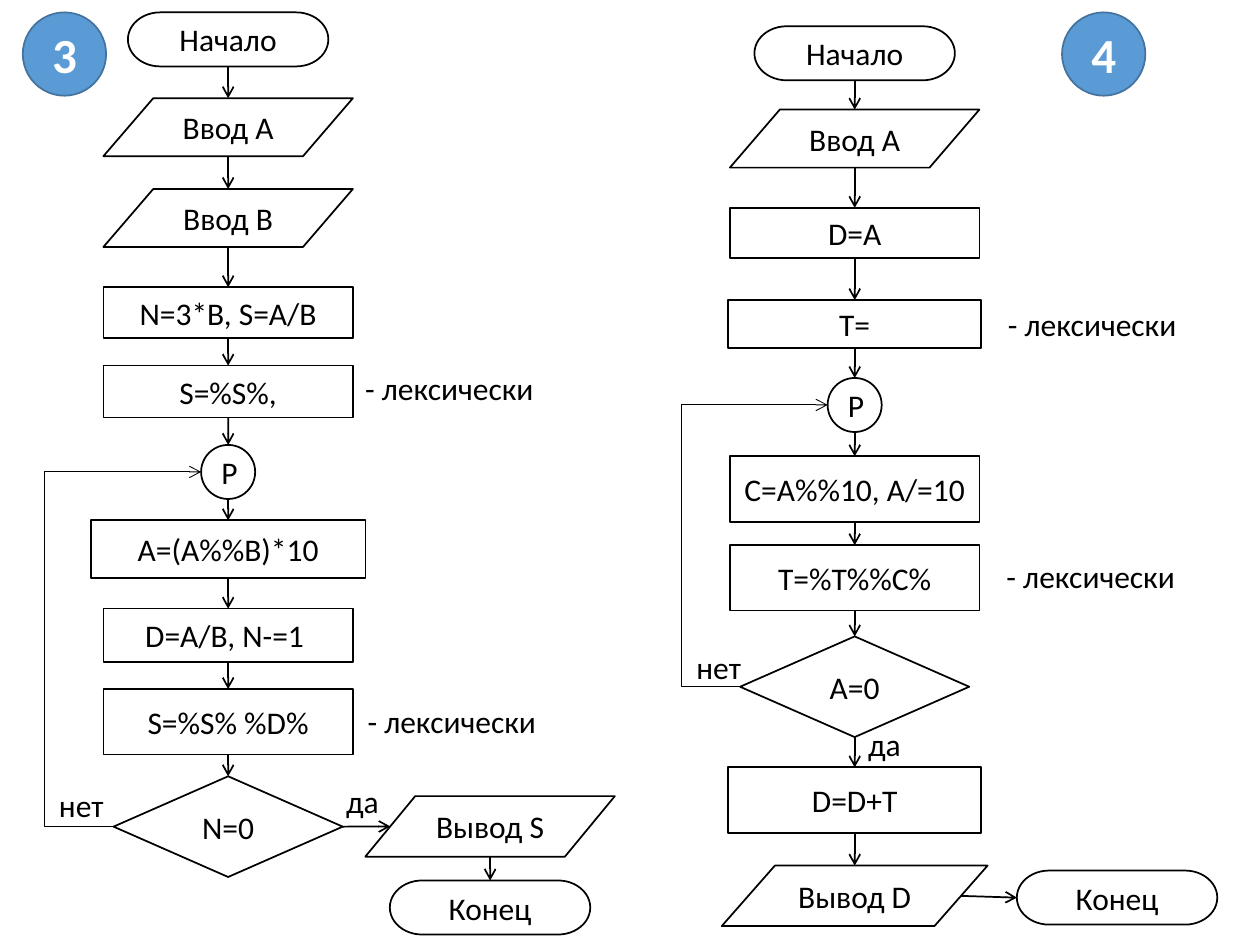
from lxml import etree
from pptx import Presentation
from pptx.dml.color import RGBColor
from pptx.enum.shapes import MSO_CONNECTOR, MSO_SHAPE
from pptx.enum.text import MSO_ANCHOR, MSO_AUTO_SIZE, PP_ALIGN
from pptx.oxml.ns import qn
from pptx.util import Cm, Pt

BLACK = RGBColor(0x00, 0x00, 0x00)
WHITE = RGBColor(0xFF, 0xFF, 0xFF)
BLUE = RGBColor(0x5B, 0x9B, 0xD5)
DARK_BLUE = RGBColor(0x43, 0x73, 0x9E)
FONT = "Calibri"

TERMINAL = MSO_SHAPE.FLOWCHART_TERMINATOR
DATA = MSO_SHAPE.FLOWCHART_DATA
PROCESS = MSO_SHAPE.RECTANGLE
DECISION = MSO_SHAPE.FLOWCHART_DECISION
JOINT = MSO_SHAPE.OVAL
STRAIGHT = MSO_CONNECTOR.STRAIGHT
ELBOW = MSO_CONNECTOR.ELBOW
MIDDLE = MSO_ANCHOR.MIDDLE
CENTER = PP_ALIGN.CENTER
FIT_SHAPE = MSO_AUTO_SIZE.SHAPE_TO_FIT_TEXT
TOP, LEFT, BOTTOM, RIGHT = range(4)
FOUR_SITED = (TERMINAL, PROCESS, DECISION)
LABEL_WIDTHS = {"да": 1.17, "нет": 1.42, "- лексически": 3.96}

# All measures in cm. Steps: kind, text, top, width, height
FLOWCHARTS = [
    {
        "number": "3", "badge_left": 0.46, "axis": 4.6, "loop_x": 0.89,
        "steps": [
            (TERMINAL, "Начало", 0.25, 4.04, 1.09),
            (DATA, "Ввод A", 1.98, 5.03, 1.17),
            (DATA, "Ввод B", 3.81, 5.03, 1.17),
            (PROCESS, "N=3*B, S=A/B", 5.79, 5.03, 1.02),
            (PROCESS, "S=%S%,", 7.37, 5.03, 1.05),
            (JOINT, "P", 8.97, 1.09, 1.09),
            (PROCESS, "A=(A%%B)*10", 10.49, 5.54, 1.17),
            (PROCESS, "D=A/B, N-=1 ", 12.27, 5.03, 1.07),
            (PROCESS, "S=%S% %D%", 13.89, 5.03, 1.32),
            (DECISION, "N=0", 15.65, 4.62, 2.03),
        ],
        # Side steps: kind, text, centre, top, width, height
        "side": [
            (DATA, "Вывод S", 9.88, 16.05, 5.03, 1.22),
            (TERMINAL, "Конец", 9.88, 17.75, 4.04, 1.09),
        ],
        "labels": [
            ("да", 6.73, 15.65), ("нет", 0.94, 15.72),
            ("- лексически", 7.16, 14.02), ("- лексически", 7.11, 7.32),
        ],
    },
    {
        "number": "4", "badge_left": 21.41, "axis": 17.23, "loop_x": 13.74,
        "steps": [
            (TERMINAL, "Начало", 0.53, 4.04, 1.09),
            (DATA, "Ввод A", 2.21, 5.03, 1.17),
            (PROCESS, "D=A", 4.19, 5.03, 1.02),
            (PROCESS, "T=", 6.05, 5.11, 0.97),
            (JOINT, "P", 7.62, 1.09, 1.09),
            (PROCESS, "C=A%%10, A/=10 ", 9.2, 5.03, 1.32),
            (PROCESS, "T=%T%%C%", 10.99, 5.03, 1.32),
            (DECISION, "A=0", 12.83, 4.62, 2.03),
            (PROCESS, "D=D+T", 15.47, 5.11, 1.32),
            (DATA, "Вывод D", 17.45, 5.36, 1.22),
        ],
        "side": [(TERMINAL, "Конец", 22.52, 17.55, 4.04, 1.09)],
        "labels": [
            ("да", 17.25, 14.5), ("нет", 13.79, 12.93),
            ("- лексически", 20.04, 11.1), ("- лексически", 20.07, 6.02),
        ],
    },
]

prs = Presentation()
prs.slide_width, prs.slide_height = Cm(25.4), Cm(19.05)
slide = prs.slides.add_slide(prs.slide_layouts[6])


def add_block(kind, text, center, top, width, height,
              fill=WHITE, line=BLACK, color=BLACK, size=18, bold=False):
    block = slide.shapes.add_shape(
        kind, Cm(center - width / 2), Cm(top), Cm(width), Cm(height))
    block.shadow.inherit = False
    block.fill.solid()
    block.fill.fore_color.rgb = fill
    block.line.color.rgb = line
    block.line.width = Pt(1)
    block.text_frame.vertical_anchor = MIDDLE
    paragraph = block.text_frame.paragraphs[0]
    paragraph.alignment = CENTER
    run = paragraph.add_run()
    run.text = text
    run.font.name, run.font.size, run.font.bold = FONT, Pt(size), bold
    run.font.color.rgb = color
    return block


def add_arrow(start, start_side, end, end_side, kind=STRAIGHT, width=1):
    points = []
    for block, side in ((start, start_side), (end, end_side)):
        # The slanted sides of a data block lie a tenth of its width inwards
        slant = block.width // 10 if block.auto_shape_type == DATA else 0
        center_x = block.left + block.width // 2
        x = {LEFT: block.left + slant,
             RIGHT: block.left + block.width - slant}.get(side, center_x)
        y = {TOP: block.top, BOTTOM: block.top + block.height}.get(
            side, block.top + block.height // 2)
        points += [x, y]
    arrow = slide.shapes.add_connector(kind, *points)
    if kind == STRAIGHT:
        if start.auto_shape_type in FOUR_SITED:
            arrow.begin_connect(start, start_side)
        if end.auto_shape_type in FOUR_SITED:
            arrow.end_connect(end, end_side)
    arrow.line.color.rgb = BLACK
    arrow.line.width = Pt(width)
    etree.SubElement(arrow.line._get_or_add_ln(), qn("a:tailEnd"), type="arrow")
    etree.SubElement(arrow._element.spPr, qn("a:effectLst"))
    return arrow


for chart in FLOWCHARTS:
    # Numbered badge
    add_block(JOINT, chart["number"], chart["badge_left"] + 0.84, 0.25, 1.68, 1.68,
              BLUE, DARK_BLUE, WHITE, 28, True)

    # Main column with arrows from step to step
    column = [add_block(kind, text, chart["axis"], top, width, height)
              for kind, text, top, width, height in chart["steps"]]
    for upper, lower in zip(column, column[1:]):
        add_arrow(upper, BOTTOM, lower, TOP)

    # Branch to the right, then down
    previous, sides = column[-1], (RIGHT, LEFT)
    for side_step in chart["side"]:
        block = add_block(*side_step)
        add_arrow(previous, sides[0], block, sides[1])
        previous, sides = block, (BOTTOM, TOP)

    # Loop from the condition back to the joint
    joint = next(b for b in column if b.auto_shape_type == JOINT)
    condition = next(b for b in column if b.auto_shape_type == DECISION)
    loop = add_arrow(condition, LEFT, joint, LEFT, ELBOW, 0.5)
    bend = round((Cm(chart["loop_x"]) - condition.left)
                 / (joint.left - condition.left) * 100000)
    guides = loop._element.spPr.find(qn("a:prstGeom")).get_or_add_avLst()
    etree.SubElement(guides, qn("a:gd"), name="adj1", fmla=f"val {bend}")

    # Branch labels and remarks
    for text, left, top in chart["labels"]:
        label = slide.shapes.add_textbox(
            Cm(left), Cm(top), Cm(LABEL_WIDTHS[text]), Cm(1.02))
        label.text_frame.word_wrap = False
        label.text_frame.auto_size = FIT_SHAPE
        run = label.text_frame.paragraphs[0].add_run()
        run.text = text
        run.font.name, run.font.size = FONT, Pt(18)
        run.font.color.rgb = BLACK

prs.save("out.pptx")
